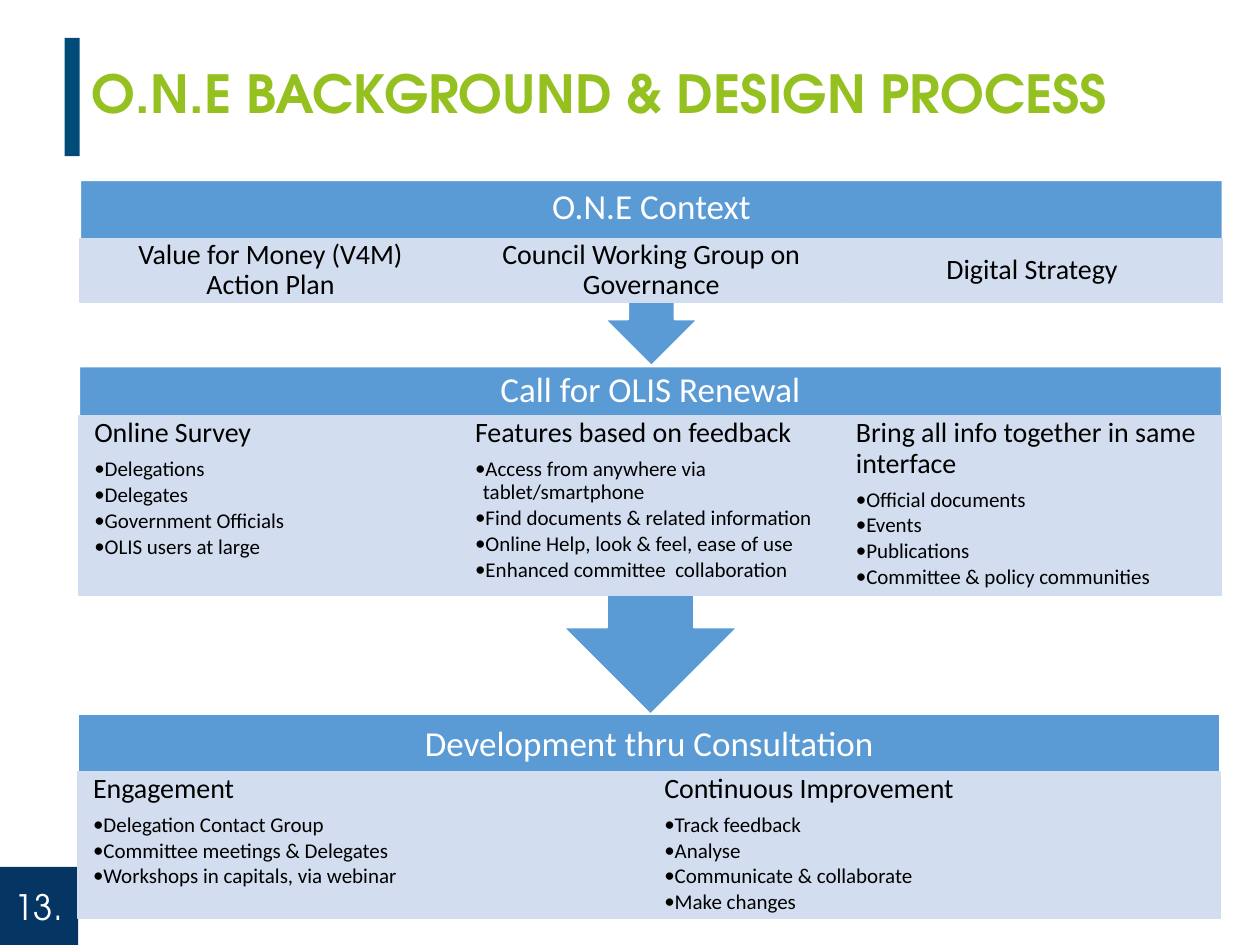
"""Build the O.N.E background and design process slide."""
from lxml.etree import SubElement
from pptx import Presentation
from pptx.dml.color import RGBColor
from pptx.enum.shapes import MSO_SHAPE
from pptx.enum.text import MSO_ANCHOR, PP_ALIGN
from pptx.oxml.ns import qn
from pptx.util import Pt

COLORS = {"bar": "004B78", "badge": "053663", "title": "94C120", "stage": "5B9BD5",
          "tile": "D2DEEF", "white": "FFFFFF", "black": "000000"}
HEADING_FONT = "TeX Gyre Adventor"
BODY_FONT = "Calibri"
STAGE_WIDTH = 652.8

STAGES = [
    {"preset": MSO_SHAPE.UP_ARROW_CALLOUT, "rotation": 180, "left": 45.8, "top": 103,
     "height": 106, "title": "O.N.E Context", "title_top": 103.7, "title_height": 30.2,
     "tile_top": 136.4, "tile_height": 36.2,
     "tiles": [("Value for Money (V4M)\vAction Plan", []),
               ("Council Working Group on Governance", []),
               ("Digital Strategy", [])]},
    {"preset": MSO_SHAPE.UP_ARROW_CALLOUT, "rotation": 180, "left": 45.3, "top": 209.5,
     "height": 198.7, "title": "Call for OLIS Renewal", "title_top": 210.2, "title_height": 26.6,
     "tile_top": 237.9, "tile_height": 102.4,
     "tiles": [("Online Survey",
                ["Delegations", "Delegates", "Government Officials", "OLIS users at large"]),
               ("Features based on feedback",
                ["Access from anywhere via tablet/smartphone",
                 "Find documents & related information",
                 "Online Help, look & feel, ease of use",
                 "Enhanced committee  collaboration"]),
               ("Bring all info together in same interface",
                ["Official documents", "Events", "Publications",
                 "Committee & policy communities"])]},
    {"preset": MSO_SHAPE.RECTANGLE, "rotation": 0, "left": 44.6, "top": 408.2,
     "height": 116.6, "title": "Development thru Consultation", "title_top": 408.2,
     "title_height": 35.3, "tile_top": 440.9, "tile_height": 83.7,
     "tiles": [("Engagement",
                ["Delegation Contact Group", "Committee meetings & Delegates",
                 "Workshops in capitals, via webinar"]),
               ("Continuous Improvement",
                ["Track feedback", "Analyse", "Communicate & collaborate", "Make changes"])]},
]

deck = Presentation()
deck.slide_width, deck.slide_height = Pt(720), Pt(540)
slide = deck.slides.add_slide(deck.slide_layouts[6])


def add_block(preset, left, top, width, height, fill, line=None):
    block = slide.shapes.add_shape(preset, Pt(left), Pt(top), Pt(width), Pt(height))
    block.shadow.inherit = False
    block.fill.solid()
    block.fill.fore_color.rgb = RGBColor.from_string(COLORS[fill])
    if line:
        block.line.color.rgb = RGBColor.from_string(COLORS[line])
        block.line.width = Pt(1)
    else:
        block.line.fill.background()
    return block


def write(shape, lines, color, margins, font=BODY_FONT, align=PP_ALIGN.CENTER,
          anchor=MSO_ANCHOR.MIDDLE, bold=False, spacing=0.9):
    frame = shape.text_frame
    frame.word_wrap = True
    frame.vertical_anchor = anchor
    frame.margin_left = frame.margin_right = Pt(margins[0])
    frame.margin_top = frame.margin_bottom = Pt(margins[1])
    for index, (text, size, space_after, bulleted) in enumerate(lines):
        paragraph = frame.paragraphs[0] if index == 0 else frame.add_paragraph()
        paragraph.text = text
        paragraph.alignment = align
        paragraph.line_spacing = spacing
        paragraph.space_after = Pt(space_after)
        if bulleted:
            paragraph.level = 1
            properties = paragraph._p.get_or_add_pPr()
            properties.set("marL", str(Pt(4.5)))
            properties.set("indent", str(-Pt(4.5)))
            SubElement(properties, qn("a:buFont")).set("typeface", font)
            SubElement(properties, qn("a:buChar")).set("char", "•")
        paragraph.font.name = font
        paragraph.font.size = Pt(size)
        paragraph.font.bold = bold
        paragraph.font.color.rgb = RGBColor.from_string(COLORS[color])


add_block(MSO_SHAPE.RECTANGLE, 36.9, 21.6, 8.6, 67.7, "bar")
page_badge = add_block(MSO_SHAPE.RECTANGLE, -0.7, 495.4, 45.4, 45.4, "badge")
write(page_badge, [("13.", 20, 0, False)], "white", (0, 0), HEADING_FONT, spacing=1.0)

headline = slide.shapes.add_textbox(Pt(45.4), Pt(21.6), Pt(632.2), Pt(67.7))
write(headline, [("O.N.E BACKGROUND & DESIGN PROCESS", 30, 0, False)], "title", (7.2, 3.6),
      HEADING_FONT, PP_ALIGN.LEFT, bold=True)

for stage in STAGES:
    panel = add_block(stage["preset"], stage["left"], stage["top"], STAGE_WIDTH,
                      stage["height"], "stage", "white")
    panel.rotation = stage["rotation"]
    stage_title = slide.shapes.add_textbox(Pt(stage["left"]), Pt(stage["title_top"]),
                                           Pt(STAGE_WIDTH), Pt(stage["title_height"]))
    write(stage_title, [(stage["title"], 20, 7, False)], "white", (11.2, 11.2))

    tile_width = STAGE_WIDTH / len(stage["tiles"])
    for column, (topic, points) in enumerate(stage["tiles"]):
        tile = add_block(MSO_SHAPE.RECTANGLE, stage["left"] + column * tile_width,
                         stage["tile_top"], tile_width, stage["tile_height"], "tile", "tile")
        lines = [(topic, 16, 5.6, False)] + [(point, 12, 1.8, True) for point in points]
        write(tile, lines, "black", (8.6, 1.4),
              align=PP_ALIGN.LEFT if points else PP_ALIGN.CENTER,
              anchor=MSO_ANCHOR.TOP if points else MSO_ANCHOR.MIDDLE)

deck.save("out.pptx")
